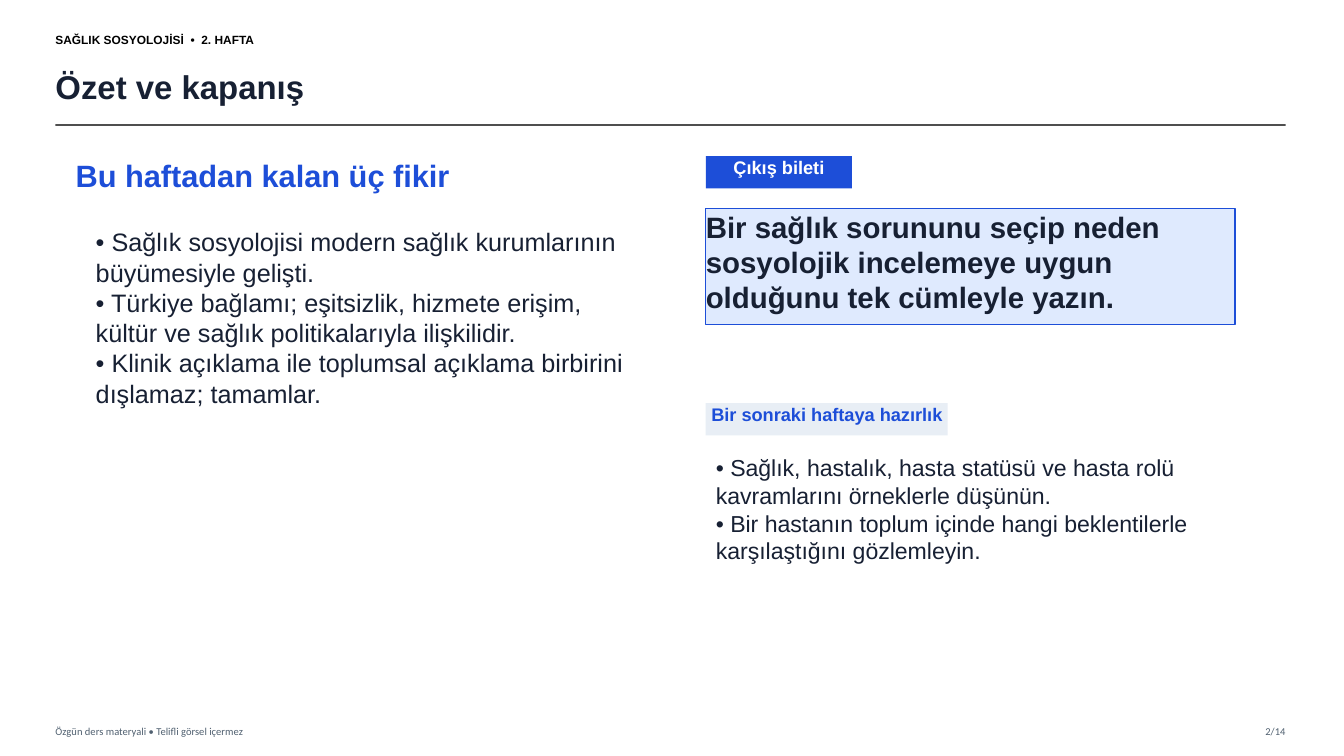
from dataclasses import dataclass

from lxml import etree
from pptx import Presentation
from pptx.dml.color import RGBColor
from pptx.enum.shapes import MSO_CONNECTOR, MSO_SHAPE
from pptx.enum.text import MSO_ANCHOR, MSO_AUTO_SIZE, PP_ALIGN
from pptx.oxml.ns import qn
from pptx.util import Pt

LEFT, CENTER, RIGHT = PP_ALIGN.LEFT, PP_ALIGN.CENTER, PP_ALIGN.RIGHT
TOP, MIDDLE = MSO_ANCHOR.TOP, MSO_ANCHOR.MIDDLE
RECT, STRAIGHT = MSO_SHAPE.RECTANGLE, MSO_CONNECTOR.STRAIGHT
NO_FIT = MSO_AUTO_SIZE.NONE
PX = 9144  # 100 px to the inch


@dataclass(frozen=True)
class Theme:
    head: str = "Arial"
    foot: str = "Calibri"
    ink: str = "172033"
    black: str = "000000"
    white: str = "FFFFFF"
    blue: str = "1D4ED8"
    pale: str = "DFEAFE"
    mist: str = "E8EEF5"
    slate: str = "506070"
    rule: str = "333333"
    tiny: float = 7.5
    kicker: float = 8.5
    tag: float = 13
    small: float = 16.5
    body: float = 18
    call: float = 21
    sub: float = 22
    title: float = 23.5


T = Theme()


def rgb(code):
    return RGBColor.from_string(code)


def write(shape, box, lines, size, color, bold=False, align=LEFT, anchor=TOP, font=T.head):
    """Place a shape and fill it with one paragraph per line, without insets."""
    shape.left, shape.top, shape.width, shape.height = (n * PX for n in box)
    frame = shape.text_frame
    frame.word_wrap = True
    frame.auto_size = NO_FIT
    frame.vertical_anchor = anchor
    frame.margin_left = frame.margin_right = frame.margin_top = frame.margin_bottom = 0
    frame.text = "\n".join(lines)
    for para in frame.paragraphs:
        para.alignment = align
        para.font.name = font
        para.font.size = Pt(size)
        para.font.bold = bold
        para.font.color.rgb = rgb(color)


deck = Presentation()
deck.slide_width, deck.slide_height = 1333 * PX, 750 * PX
slide = deck.slides.add_slide(deck.slide_layouts[5])
shapes = slide.shapes
slide.background.fill.solid()
slide.background.fill.fore_color.rgb = rgb(T.white)

# Title and rule
write(shapes.title, (55, 58, 1195, 55), ["Özet ve kapanış"], T.title, T.ink, True, anchor=MIDDLE)

rule = shapes.add_connector(STRAIGHT, 55 * PX, 124 * PX, 1275 * PX, 124 * PX)
rule.line.width = Pt(1.2)
rule.line.color.rgb = rgb(T.rule)
tint = rule.line.fill._xPr.find(".//" + qn("a:srgbClr"))
etree.SubElement(tint, qn("a:alpha")).set("val", "85000")
etree.SubElement(rule._element.spPr, qn("a:effectLst"))

# Header and footer
margin = [
    ((55, 25, 360, 28), "SAĞLIK SOSYOLOJİSİ  •  2. HAFTA", T.kicker, T.black, True, LEFT, T.head),
    ((55, 714, 600, 22), "Özgün ders materyali • Telifli görsel içermez",
     T.tiny, T.slate, False, LEFT, T.foot),
    ((1210, 714, 65, 22), "2/14", T.tiny, T.slate, False, RIGHT, T.foot),
]
for box, text, size, color, bold, align, font in margin:
    write(shapes.add_textbox(0, 0, 0, 0), box, [text], size, color, bold, align, MIDDLE, font)

# Subtitle and lists
copy = [
    ((75, 155, 540, 45), ["Bu haftadan kalan üç fikir"], T.sub, T.blue, True),
    ((95, 225, 550, 240), [
        "• Sağlık sosyolojisi modern sağlık kurumlarının büyümesiyle gelişti.",
        "• Türkiye bağlamı; eşitsizlik, hizmete erişim, kültür ve sağlık politikalarıyla ilişkilidir.",
        "• Klinik açıklama ile toplumsal açıklama birbirini dışlamaz; tamamlar.",
    ], T.body, T.ink, False),
    ((710, 450, 520, 135), [
        "• Sağlık, hastalık, hasta statüsü ve hasta rolü kavramlarını örneklerle düşünün.",
        "• Bir hastanın toplum içinde hangi beklentilerle karşılaştığını gözlemleyin.",
    ], T.small, T.ink, False),
]
for box, lines, size, color, bold in copy:
    write(shapes.add_textbox(0, 0, 0, 0), box, lines, size, color, bold)

# Filled tags and the exit question
panels = [
    ((700, 155, 145, 32), "Çıkış bileti", T.tag, T.white, CENTER, T.blue, None),
    ((700, 207, 525, 115),
     "Bir sağlık sorununu seçip neden sosyolojik incelemeye uygun olduğunu tek cümleyle yazın.",
     T.call, T.ink, LEFT, T.pale, T.blue),
    ((700, 400, 240, 32), "Bir sonraki haftaya hazırlık", T.tag, T.blue, CENTER, T.mist, None),
]
for box, text, size, color, align, fill, edge in panels:
    panel = shapes.add_shape(RECT, 0, 0, 0, 0)
    panel.shadow.inherit = False
    panel.fill.solid()
    panel.fill.fore_color.rgb = rgb(fill)
    if edge:
        panel.line.color.rgb = rgb(edge)
        panel.line.width = Pt(1)
    else:
        panel.line.fill.background()
    write(panel, box, [text], size, color, True, align)

deck.save("out.pptx")
